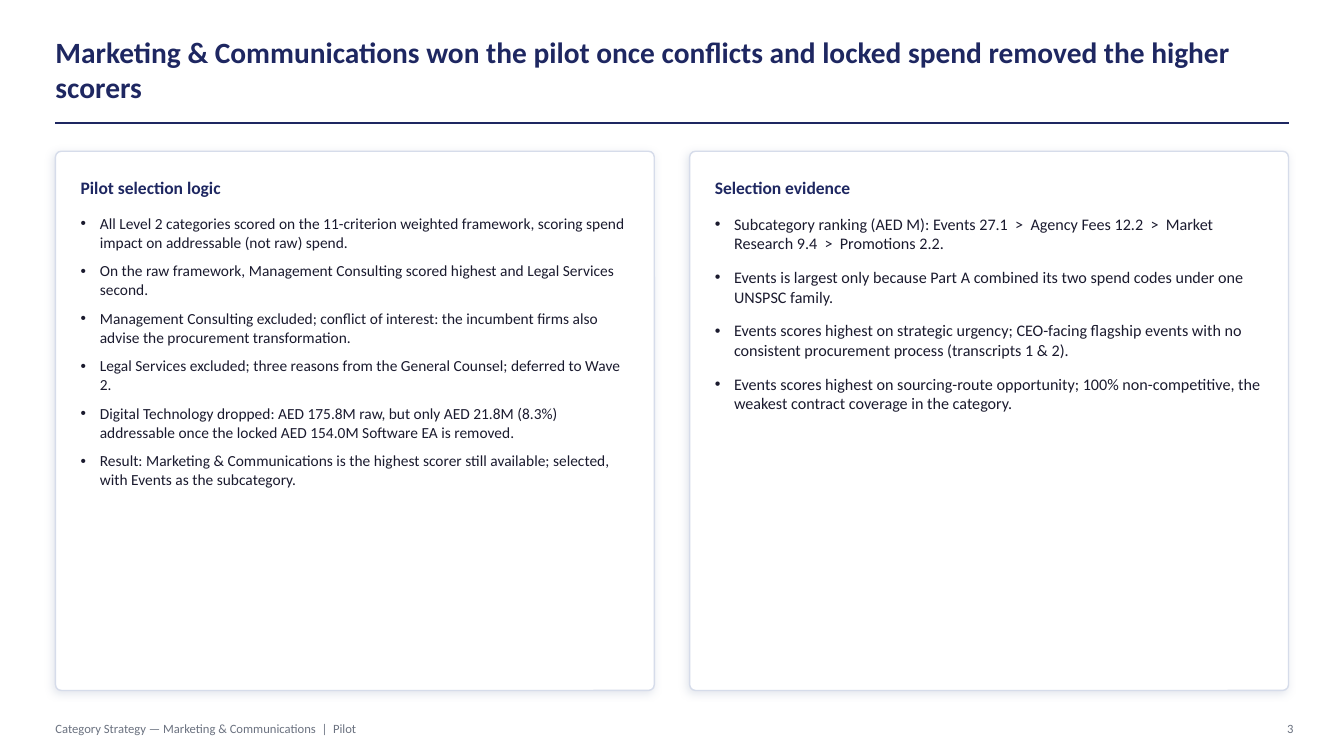
import collections
import dataclasses

import lxml.etree
import pptx
import pptx.dml.color
import pptx.enum.shapes
import pptx.enum.text
import pptx.oxml.ns
import pptx.util

Box = collections.namedtuple("Box", "left top width height")
Panel = collections.namedtuple("Panel", "title size after points")
Align = pptx.enum.text.PP_ALIGN
Anchor = pptx.enum.text.MSO_ANCHOR
qn = pptx.oxml.ns.qn


@dataclasses.dataclass(frozen=True)
class Theme:
    """Colours, font and type sizes of the slide."""
    font: str = "Calibri"
    navy: str = "1E2761"
    ink: str = "1A1A2E"
    grey: str = "6B7280"
    white: str = "FFFFFF"
    edge: str = "D6DCEA"
    shade: str = "9AA6C0"
    title: float = 21
    head: float = 12.5
    small: float = 9


THEME = Theme()
WIDTH, HEIGHT = 13.33, 7.5
MARGIN, GAP, PAD = 0.55, 0.35, 0.25
SPAN = WIDTH - 2 * MARGIN

PANELS = [
    Panel("Pilot selection logic", 11, 7, [
        "All Level 2 categories scored on the 11-criterion weighted framework, scoring spend impact on addressable (not raw) spend.",
        "On the raw framework, Management Consulting scored highest and Legal Services second.",
        "Management Consulting excluded; conflict of interest: the incumbent firms also advise the procurement transformation.",
        "Legal Services excluded; three reasons from the General Counsel; deferred to Wave 2.",
        "Digital Technology dropped: AED 175.8M raw, but only AED 21.8M (8.3%) addressable once the locked AED 154.0M Software EA is removed.",
        "Result: Marketing & Communications is the highest scorer still available; selected, with Events as the subcategory.",
    ]),
    Panel("Selection evidence", 11.5, 10, [
        "Subcategory ranking (AED M): Events 27.1  >  Agency Fees 12.2  >  Market Research 9.4  >  Promotions 2.2.",
        "Events is largest only because Part A combined its two spend codes under one UNSPSC family.",
        "Events scores highest on strategic urgency; CEO-facing flagship events with no consistent procurement process (transcripts 1 & 2).",
        "Events scores highest on sourcing-route opportunity; 100% non-competitive, the weakest contract coverage in the category.",
    ]),
]


def tint(text):
    """Turn a hex string into a colour."""
    return pptx.dml.color.RGBColor.from_string(text)


def units(box):
    """Turn a box in inches into slide units."""
    return [pptx.util.Inches(side) for side in box]


def place(shape, box, anchor):
    """Move a text shape to its box and clear its insets."""
    shape.left, shape.top, shape.width, shape.height = units(box)
    frame = shape.text_frame
    frame.word_wrap = True
    frame.auto_size = pptx.enum.text.MSO_AUTO_SIZE.NONE
    frame.vertical_anchor = anchor
    frame.margin_left = frame.margin_right = 0
    frame.margin_top = frame.margin_bottom = 0
    return frame


def write(para, text, size, color, bold=False, align=Align.LEFT):
    """Add one styled run to a paragraph."""
    para.alignment = align
    para.space_before = pptx.util.Pt(0)
    run = para.add_run()
    run.text = text
    run.font.name = THEME.font
    run.font.size = pptx.util.Pt(size)
    run.font.bold = bold
    run.font.color.rgb = tint(color)


def bullet(para):
    """Give a paragraph a hanging round bullet."""
    props = para._p.get_or_add_pPr()
    indent = pptx.util.Inches(0.19)
    props.set("marL", str(indent))
    props.set("indent", str(-indent))
    lxml.etree.SubElement(props, qn("a:buChar"), char="•")


def shadow(shape):
    """Give a shape a soft outer shadow."""
    shape.shadow.inherit = False
    effects = shape.element.spPr.find(qn("a:effectLst"))
    outer = lxml.etree.SubElement(
        effects, qn("a:outerShdw"), blurRad=str(pptx.util.Pt(6)),
        dist=str(pptx.util.Pt(2)), dir=str(135 * 60000), algn="bl", rotWithShape="0")
    color = lxml.etree.SubElement(outer, qn("a:srgbClr"), val=THEME.shade)
    lxml.etree.SubElement(color, qn("a:alpha"), val="28000")


def header(slide, box):
    """Place the title and the rule below it."""
    frame = place(slide.shapes.title, box._replace(height=0.82), Anchor.TOP)
    write(frame.paragraphs[0],
          "Marketing & Communications won the pilot once conflicts and locked spend removed the higher scorers",
          THEME.title, THEME.navy, True)
    base = box.top + box.height
    rule = slide.shapes.add_connector(
        pptx.enum.shapes.MSO_CONNECTOR.STRAIGHT,
        *units((box.left, base, box.left + box.width, base)))
    rule.line.color.rgb = tint(THEME.navy)
    rule.line.width = pptx.util.Pt(1.25)
    lxml.etree.SubElement(rule.element.spPr, qn("a:effectLst"))


def card(slide, box, panel, head, body):
    """Draw a panel behind its heading and bullet list."""
    back = slide.shapes.add_shape(
        pptx.enum.shapes.MSO_SHAPE.ROUNDED_RECTANGLE, *units(box))
    back.adjustments[0] = 0.011
    back.fill.solid()
    back.fill.fore_color.rgb = tint(THEME.white)
    back.line.color.rgb = tint(THEME.edge)
    back.line.width = pptx.util.Pt(1)
    shadow(back)
    head.element.addprevious(back.element)

    left, width = box.left + PAD, box.width - 2 * PAD
    frame = place(head, Box(left, box.top + 0.2, width, 0.32), Anchor.MIDDLE)
    write(frame.paragraphs[0], panel.title, THEME.head, THEME.navy, True)
    frame = place(body, Box(left, box.top + 0.62, width, box.height - 0.8), Anchor.TOP)
    for index, point in enumerate(panel.points):
        para = frame.add_paragraph() if index else frame.paragraphs[0]
        bullet(para)
        para.line_spacing = 1.02
        para.space_after = pptx.util.Pt(panel.after)
        write(para, point, panel.size, THEME.ink)


def footer(slide, box):
    """Place the running footer and the page number."""
    end = box.left + box.width + 0.05
    notes = [
        ("Category Strategy — Marketing & Communications  |  Pilot",
         box._replace(width=9), Align.LEFT),
        ("3", box._replace(left=end - 0.5, width=0.5), Align.RIGHT),
    ]
    for text, area, align in notes:
        frame = place(slide.shapes.add_textbox(*units(area)), area, Anchor.MIDDLE)
        write(frame.paragraphs[0], text, THEME.small, THEME.grey, align=align)


def main():
    """Build and save the slide."""
    deck = pptx.Presentation()
    deck.slide_width, deck.slide_height = units((WIDTH, HEIGHT))
    slide = deck.slides.add_slide(deck.slide_layouts.get_by_name("Comparison"))
    header(slide, Box(MARGIN, 0.34, SPAN, 0.88))
    holders = list(slide.placeholders)[1:]
    width = (SPAN - GAP) / 2
    for col, panel in enumerate(PANELS):
        box = Box(MARGIN + col * (width + GAP), 1.5, width, 5.35)
        card(slide, box, panel, *holders[2 * col:2 * col + 2])
    footer(slide, Box(MARGIN, 7.08, SPAN, 0.3))
    deck.save("out.pptx")


if __name__ == "__main__":
    main()
